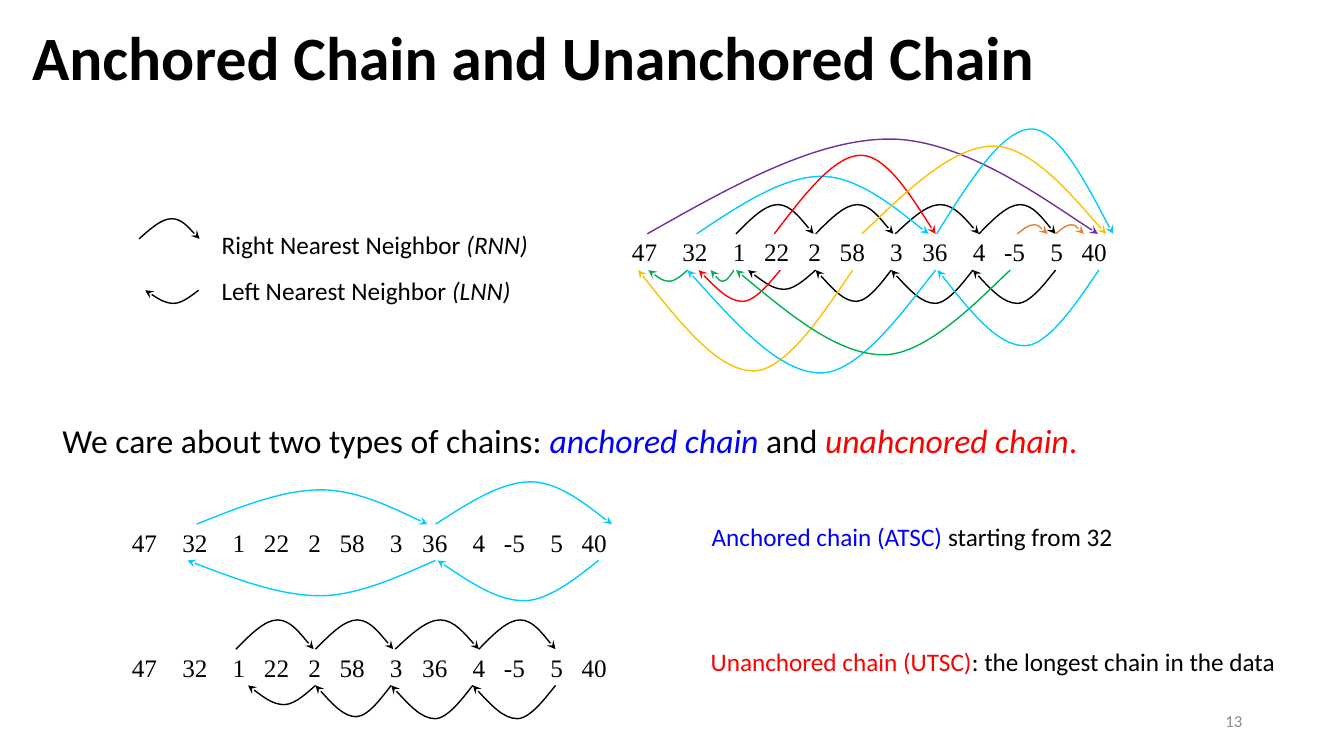
from lxml import etree
from pptx import Presentation
from pptx.dml.color import RGBColor
from pptx.enum import text
from pptx.oxml import ns
from pptx.util import Inches, Pt

BLACK, RED, BLUE, GREY = "000000", "FF0000", "0000FF", "8C8C8C"
CYAN, GREEN, GOLD, PURPLE, ORANGE = "00CCFF", "00B050", "FFC000", "7030A0", "ED7D31"

prs = Presentation()
prs.slide_width, prs.slide_height = Inches(13.33), Inches(7.5)
slide = prs.slides.add_slide(prs.slide_layouts[6])


def write(left, top, width, height, size, runs, font="Calibri", bold=False):
    """Add a one-paragraph text box from (words, colour, italic) runs."""
    frame = slide.shapes.add_textbox(
        Inches(left), Inches(top), Inches(width), Inches(height)).text_frame
    frame.word_wrap = True
    paragraph = frame.paragraphs[0]
    for words, colour, italic in runs:
        run = paragraph.add_run()
        run.text = words
        look = {"name": font, "size": Pt(size), "bold": bold, "italic": italic}
        for key, value in look.items():
            setattr(run.font, key, value)
        run.font.color.rgb = RGBColor.from_string(colour)
    return frame


def draw_arc(colour, left, right, base, peak):
    """Arch with its arrow at the right end, or hanging with it at the left."""
    width, rise = right - left, peak - base
    curve = [(0.186, 0.5), (0.372, 1), (0.538, 1), (0.705, 1), (0.914, 0.25), (1, 0)]
    builder = slide.shapes.build_freeform(Inches(left), Inches(base))
    builder.add_line_segments(
        [(Inches(left + x * width), Inches(base + y * rise)) for x, y in curve],
        close=False)
    arc = builder.convert_to_shape()
    arc.shadow.inherit = False
    arc.fill.background()
    arc.line.color.rgb = RGBColor.from_string(colour)
    arc.line.width = Pt(1)
    # Every three straight segments become one cubic Bézier segment.
    segments = list(arc.element.iter(ns.qn("a:lnTo")))
    outline = segments[0].getparent()
    for first in range(0, len(segments), 3):
        bezier = etree.SubElement(outline, ns.qn("a:cubicBezTo"))
        for segment in segments[first:first + 3]:
            bezier.append(segment[0])
            outline.remove(segment)
    arrow_end = "a:tailEnd" if peak < base else "a:headEnd"
    etree.SubElement(arc.line._get_or_add_ln(), ns.qn(arrow_end), type="stealth")


title = write(0.22, 0.21, 11.5, 0.78, 44,
              [("Anchored Chain and Unanchored Chain", BLACK, False)], bold=True)
title.vertical_anchor = text.MSO_ANCHOR.MIDDLE
title.paragraphs[0].line_spacing = 0.9

# Legend
for top, side, short in [(2.23, "Right", "(RNN)"), (2.68, "Left", "(LNN)")]:
    write(2.1, top, 3.42, 0.4, 18,
          [(f"{side} Nearest Neighbor ", BLACK, False), (short, BLACK, True)])
draw_arc(BLACK, 1.38, 1.98, 2.37, 2.17)
draw_arc(BLACK, 1.44, 1.97, 2.88, 3.01)

# Explanations
write(0.52, 4.12, 10.41, 0.5, 24, [
    ("We care about two types of chains: ", BLACK, False),
    ("anchored chain ", BLUE, True), ("and ", BLACK, False),
    ("unahcnored chain", RED, True), (".", RED, False)])
write(6.96, 5.12, 4.2, 0.4, 18, [
    ("Anchored chain (ATSC) ", BLUE, False), ("starting from 32", BLACK, False)])
write(6.95, 6.36, 5.89, 0.4, 18, [
    ("Unanchored chain (UTSC)", RED, False),
    (": the longest chain in the data", BLACK, False)])

# Arcs: colour, left and right from the row's left edge, peak from the row's top
unanchored_chain = [
    (BLACK, 1.13, 1.9, -0.27), (BLACK, 1.92, 2.69, -0.27),
    (BLACK, 2.71, 3.54, -0.27), (BLACK, 3.54, 4.3, -0.27),
    (BLACK, 1.25, 1.92, 0.57), (BLACK, 1.92, 2.67, 0.69),
    (BLACK, 2.67, 3.48, 0.71), (BLACK, 3.48, 4.3, 0.71),
]
anchored_chain = [
    (CYAN, 0.74, 3.03, -0.32), (CYAN, 3.11, 4.86, -0.4),
    (CYAN, 0.65, 3.11, 0.73), (CYAN, 3.13, 4.73, 0.78),
]
all_neighbors = unanchored_chain + [
    (PURPLE, 0.25, 4.72, -0.92), (CYAN, 0.74, 3.04, -0.55),
    (CYAN, 3.12, 4.87, -1.02), (ORANGE, 3.92, 4.22, -0.07),
    (GREEN, 0.26, 0.65, 0.49), (GREEN, 0.88, 1.11, 0.49),
    (RED, 0.76, 1.57, 0.69), (GOLD, 0.16, 2.29, 1.38),
    (CYAN, 0.65, 3.11, 1.4), (GREEN, 1.13, 3.85, 1.22),
    (CYAN, 3.13, 4.73, 1.13), (RED, 1.51, 3.11, -0.76),
    (ORANGE, 4.3, 4.58, -0.07), (GOLD, 2.38, 4.8, -0.85),
]

numbers = ["47", "32", "1", "22", "2", "58", "3", "36", "4", "-5", "5", "40"]
number_stops = [0.5, 1, 1.31, 1.75, 2.06, 2.56, 2.88, 3.38, 3.69, 4.15, 4.46]
rows = [(6.17, 2.3, all_neighbors), (1.21, 5.18, anchored_chain),
        (1.21, 6.42, unanchored_chain)]
for row_left, row_top, arcs in rows:
    row = write(row_left, row_top, 5.07, 0.4, 18,
                [("\t".join(numbers), BLACK, False)], font="Times New Roman")
    properties = row.paragraphs[0]._p.get_or_add_pPr()
    tab_list = etree.SubElement(properties, ns.qn("a:tabLst"))
    for stop in number_stops:
        etree.SubElement(tab_list, ns.qn("a:tab"), pos=str(Inches(stop)), algn="l")
    for colour, left, right, peak in arcs:
        base = 0.02 if peak < 0 else 0.38
        draw_arc(colour, row_left + left, row_left + right,
                 row_top + base, row_top + peak)

page_number = write(9.42, 6.95, 3, 0.4, 12, [("13", GREY, False)])
page_number.vertical_anchor = text.MSO_ANCHOR.MIDDLE
page_number.paragraphs[0].alignment = text.PP_ALIGN.RIGHT

prs.save("out.pptx")
